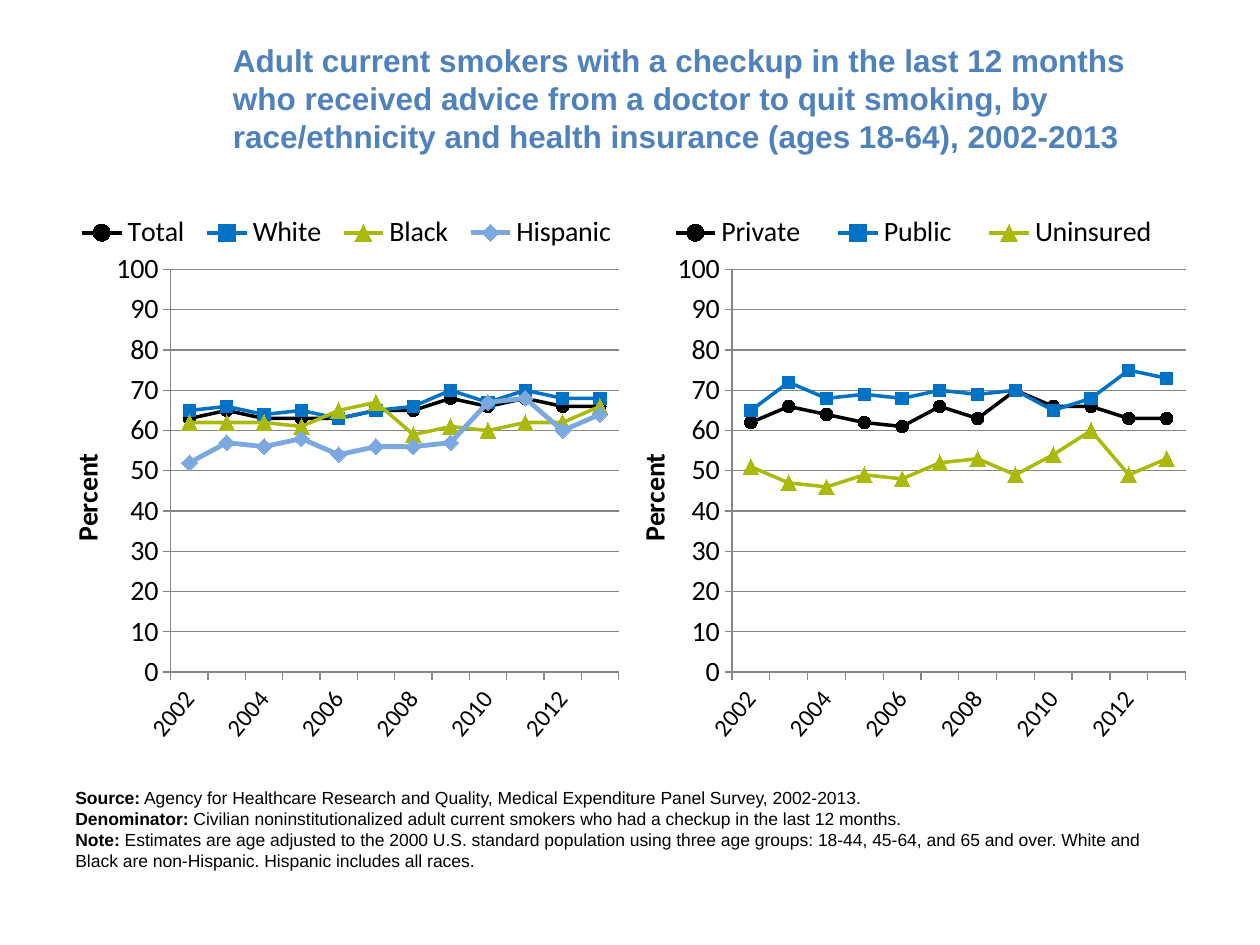
from dataclasses import dataclass

from lxml.etree import SubElement
from pptx import Presentation
from pptx.chart.data import CategoryChartData
from pptx.dml.color import RGBColor as RGB
from pptx.enum.chart import XL_CHART_TYPE as ChartType
from pptx.enum.chart import XL_LEGEND_POSITION as LegendPos
from pptx.enum.chart import XL_MARKER_STYLE as Marker
from pptx.enum.chart import XL_TICK_MARK as Tick
from pptx.enum.text import MSO_ANCHOR as Anchor
from pptx.oxml.ns import qn
from pptx.util import Pt

PX = 9144


@dataclass(frozen=True)
class Theme:
    heading: str = "4F81BD"
    ink: str = "000000"
    grid: str = "868686"
    white: str = "FFFFFF"
    blue: str = "0072C6"
    olive: str = "AABA0A"
    sky: str = "7BA8DF"
    text_font: str = "Arial"
    chart_font: str = "Calibri"
    title_size: int = 18
    axis_size: int = 16
    year_size: int = 14
    note_size: int = 10


T = Theme()
YEARS = [str(year) for year in range(2002, 2014)]
STYLES = [
    (T.ink, Marker.CIRCLE, 7, 2),
    (T.blue, Marker.SQUARE, 7, 2),
    (T.olive, Marker.TRIANGLE, 9, 2),
    (T.sky, Marker.DIAMOND, 9, 2.75),
]
RACE = {
    "Total": (63, 65, 63, 63, 63, 65, 65, 68, 66, 68, 66, 66),
    "White": (65, 66, 64, 65, 63, 65, 66, 70, 67, 70, 68, 68),
    "Black": (62, 62, 62, 61, 65, 67, 59, 61, 60, 62, 62, 66),
    "Hispanic": (52, 57, 56, 58, 54, 56, 56, 57, 67, 68, 60, 64),
}
INSURANCE = {
    "Private": (62, 66, 64, 62, 61, 66, 63, 70, 66, 66, 63, 63),
    "Public": (65, 72, 68, 69, 68, 70, 69, 70, 65, 68, 75, 73),
    "Uninsured": (51, 47, 46, 49, 48, 52, 53, 49, 54, 60, 49, 53),
}
TITLE = (
    "Adult current smokers with a checkup in the last 12 months who received "
    "advice from a doctor to quit smoking, by race/ethnicity and health "
    "insurance (ages 18-64), 2002-2013"
)
NOTES = [
    ("Source:", " Agency for Healthcare Research and Quality, Medical "
     "Expenditure Panel Survey, 2002-2013."),
    ("Denominator:", " Civilian noninstitutionalized adult current smokers "
     "who had a checkup in the last 12 months."),
    ("Note: ", "Estimates are age adjusted to the 2000 U.S. standard "
     "population using three age groups: 18-44, 45-64, and 65 and over. "
     "White and Black are non-Hispanic. Hispanic includes all races."),
]


def style_font(font, name=T.chart_font, size=T.axis_size, color=T.ink, bold=False):
    font.name, font.size, font.bold = name, Pt(size), bold
    font.color.rgb = RGB.from_string(color)


def add_run(p, text, **style):
    r = p.add_run()
    r.text = text
    style_font(r.font, **style)


def place(layout, x, y, w, h, inner=False):
    for old in list(layout):
        layout.remove(old)
    manual = SubElement(layout, qn("c:manualLayout"))
    parts = [("layoutTarget", "inner")] if inner else []
    parts += [("xMode", "edge"), ("yMode", "edge")]
    parts += [("x", x), ("y", y), ("w", w), ("h", h)]
    for tag, value in parts:
        SubElement(manual, qn(f"c:{tag}")).set("val", str(value))


def new_layout(after):
    layout = after.makeelement(qn("c:layout"), {})
    after.addnext(layout)
    return layout


class Deck:
    def __init__(self, theme, width, height):
        self.theme = theme
        self.prs = Presentation()
        self.prs.slide_width, self.prs.slide_height = width * PX, height * PX
        self.s = self.prs.slides.add_slide(self.prs.slide_layouts[6])
        self.s.background.fill.solid()
        self.s.background.fill.fore_color.rgb = RGB.from_string(theme.white)

    def text(self, paragraphs, x, y, w, h, anchor=Anchor.TOP, **style):
        tf = self.s.shapes.add_textbox(x * PX, y * PX, w * PX, h * PX).text_frame
        tf.word_wrap, tf.vertical_anchor = True, anchor
        for i, runs in enumerate(paragraphs):
            p = tf.add_paragraph() if i else tf.paragraphs[0]
            for text, bold in runs:
                add_run(p, text, name=self.theme.text_font, bold=bold, **style)

    def line_chart(self, series, x, y, w, h, plot, legend):
        data = CategoryChartData(number_format="0")
        data.categories = YEARS
        for name, values in series.items():
            data.add_series(name, values)
        chart = self.s.shapes.add_chart(
            ChartType.LINE_MARKERS, x * PX, y * PX, w * PX, h * PX, data
        ).chart
        style_font(chart.font, self.theme.text_font, self.theme.note_size)
        chart.has_title = False
        chart.plots[0].vary_by_categories = False
        for line, style in zip(chart.plots[0].series, STYLES):
            self.line_style(line, *style)
        self.axes(chart)
        chart.has_legend = True
        chart.legend.position = LegendPos.TOP
        chart.legend.include_in_layout = False
        style_font(chart.legend.font)
        area = chart.plots[0]._element.getparent()
        layout = area.find(qn("c:layout"))
        if layout is None:
            layout = area.makeelement(qn("c:layout"), {})
            area.insert(0, layout)
        place(layout, *plot, inner=True)
        box = chart.legend._element
        layout = box.find(qn("c:layout"))
        if layout is None:
            layout = new_layout(box.find(qn("c:legendPos")))
        place(layout, *legend)

    def line_style(self, line, color, marker, size, width):
        rgb = RGB.from_string(color)
        line.smooth = False
        line.format.line.width = Pt(width)
        line.format.line.color.rgb = rgb
        line.marker.style, line.marker.size = marker, size
        line.marker.format.fill.solid()
        line.marker.format.fill.fore_color.rgb = rgb
        line.marker.format.line.color.rgb = rgb

    def axes(self, chart):
        cat, val = chart.category_axis, chart.value_axis
        val.minimum_scale, val.maximum_scale, val.major_unit = 0, 100, 10
        val.has_major_gridlines = True
        val.tick_labels.number_format = "0"
        val.tick_labels.number_format_is_linked = False
        add_run(val.axis_title.text_frame.paragraphs[0], "Percent", bold=True)
        for axis, size in ((cat, self.theme.year_size), (val, self.theme.axis_size)):
            axis.major_tick_mark, axis.minor_tick_mark = Tick.OUTSIDE, Tick.NONE
            style_font(axis.tick_labels.font, size=size)
        for item in (cat, val, val.major_gridlines):
            item.format.line.color.rgb = RGB.from_string(self.theme.grid)
            item.format.line.width = Pt(0.75)
        ax = cat._element
        ax.find(qn("c:txPr")).find(qn("a:bodyPr")).set("rot", "-3000000")
        skip = ax.makeelement(qn("c:tickLblSkip"), {"val": "2"})
        ax.find(qn("c:noMultiLvlLbl")).addprevious(skip)


def main():
    deck = Deck(T, 1000, 750)
    deck.text([[(TITLE, True)]], 175, 30, 775, 95, Anchor.MIDDLE,
              size=T.title_size, color=T.heading)
    deck.line_chart(RACE, 50, 160, 450, 450,
                    (0.19, 0.12, 0.79, 0.71), (0.01, 0.01, 0.98, 0.09))
    deck.line_chart(INSURANCE, 500, 160, 450, 450,
                    (0.18, 0.12, 0.8, 0.71), (0.03, 0.01, 0.94, 0.09))
    deck.text([[(label, True), (body, False)] for label, body in NOTES],
              50, 620, 900, 77, size=T.note_size)
    deck.prs.save("out.pptx")


if __name__ == "__main__":
    main()
